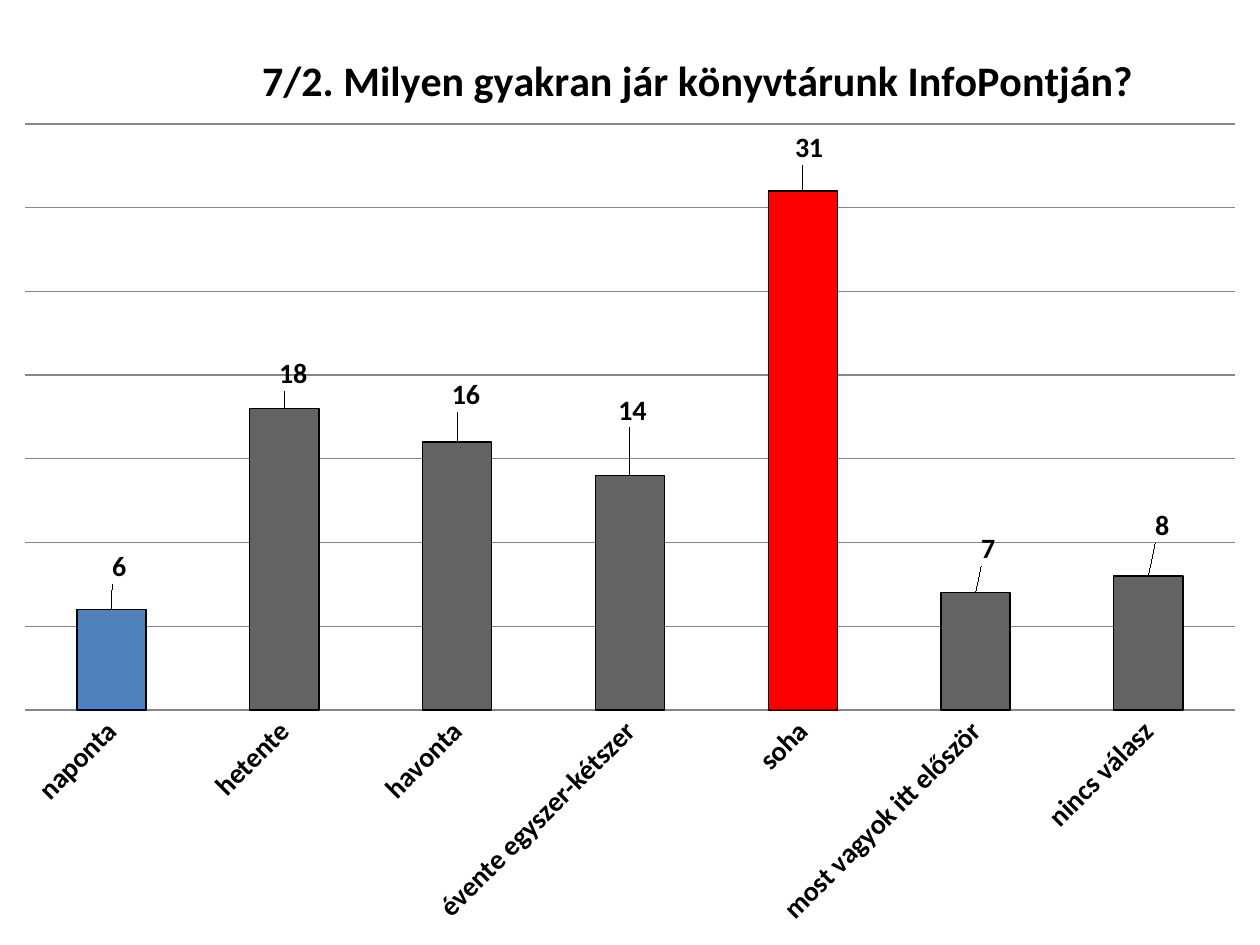
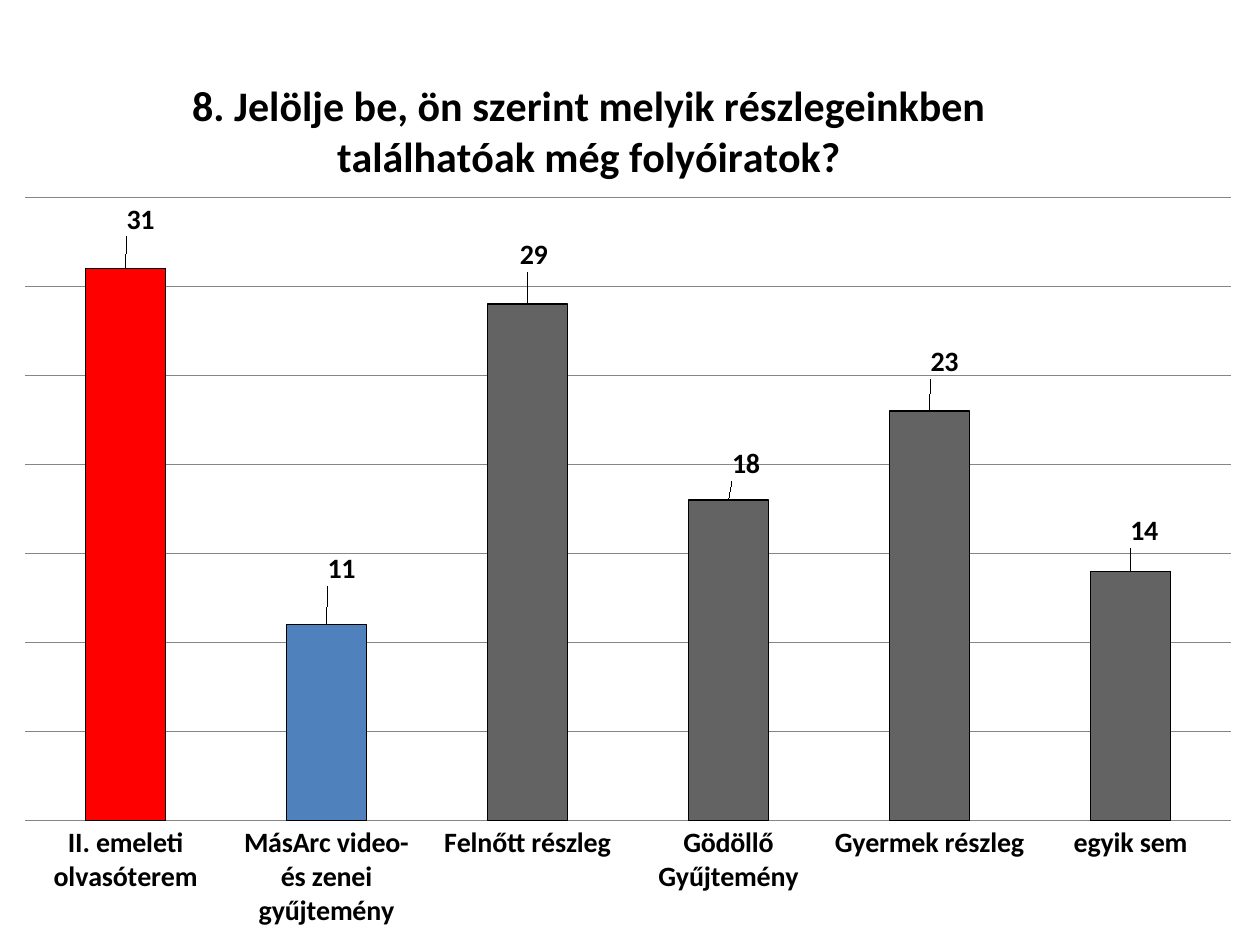
import dataclasses
import typing

import pptx
import pptx.chart.data
import pptx.dml.color
import pptx.enum.chart
import pptx.oxml
import pptx.oxml.ns
import pptx.util

INK = {"text": "000000", "grid": "868686", "bar": "636363",
       "blue": "4F81BD", "red": "FF0000"}
FACE = "Calibri"
WIDE, HIGH = pptx.util.Inches(10), pptx.util.Inches(7.5)
COL, ROW = WIDE / 1000, HIGH / 750


class Bar(typing.NamedTuple):
    name: str
    count: int
    shift: float
    lift: float
    ink: str = "bar"


@dataclasses.dataclass
class Poll:
    title: str
    top: int
    cols: int
    head: tuple[float, float]
    plot: tuple[float, float, float, float]
    turn: int
    bars: list[Bar]


POLLS = [
    Poll("7/2. Milyen gyakran jár könyvtárunk InfoPontján?",
         13, 1000, (20.2, 3), (2, 11.6, 96, 63.1), -45, [
             Bar("naponta", 6, 0.6, 2.2, "blue"),
             Bar("hetente", 18, 0.7, 1.3),
             Bar("havonta", 16, 0.7, 2.7),
             Bar("évente egyszer-kétszer", 14, 0.2, 4.6),
             Bar("soha", 31, 0.5, 2.2, "red"),
             Bar("most vagyok itt először", 7, 1, 2.3),
             Bar("nincs válasz", 8, 1.1, 3)]),
    Poll("8. Jelölje be, ön szerint melyik részlegeinkben "
         "találhatóak még folyóiratok?",
         21, 997, (14.7, 4.7), (2, 18.6, 96, 67.9), 0, [
             Bar("II. emeleti olvasóterem", 31, 1.2, 2.9, "red"),
             Bar("MásArc video- és zenei gyűjtemény", 11, 1.2, 3.6, "blue"),
             Bar("Felnőtt részleg", 29, 0.5, 2.9),
             Bar("Gödöllő Gyűjtemény", 18, 1.4, 1.5),
             Bar("Gyermek részleg", 23, 1.2, 2.9),
             Bar("egyik sem", 14, 1.1, 2)]),
]


def tint(name: str) -> pptx.dml.color.RGBColor:
    return pptx.dml.color.RGBColor.from_string(INK[name])


def style(font: typing.Any, size: int, bold: bool = True) -> None:
    font.name, font.size, font.bold = FACE, pptx.util.Pt(size), bold
    font.color.rgb = tint("text")


def stroke(line: typing.Any, name: str) -> None:
    line.color.rgb = tint(name)
    line.width = pptx.util.Pt(0.75)


def place(node: typing.Any, slot: int, spot: tuple[float, ...],
          edge: bool = True) -> None:
    for old in node.xpath("c:layout"):
        node.remove(old)
    tags = '<c:layoutTarget val="inner"/>' if len(spot) == 4 else ""
    if edge:
        tags += '<c:xMode val="edge"/><c:yMode val="edge"/>'
    for key, share in zip("xywh", spot):
        tags += f'<c:{key} val="{share / 100:.4f}"/>'
    names = pptx.oxml.ns.nsdecls("c")
    node.insert(slot, pptx.oxml.parse_xml(
        f"<c:layout {names}><c:manualLayout>{tags}</c:manualLayout></c:layout>"))


def set_axes(chart: typing.Any, turn: int) -> None:
    axis = chart.value_axis
    axis.minimum_scale, axis.maximum_scale, axis.major_unit = 0, 35, 5
    axis.visible = False
    axis.has_major_gridlines = True
    stroke(axis.major_gridlines.format.line, "grid")
    base = chart.category_axis
    base.major_tick_mark = pptx.enum.chart.XL_TICK_MARK.NONE
    stroke(base.format.line, "grid")
    style(base.tick_labels.font, 16)
    body = chart.element.xpath(".//c:catAx/c:txPr/a:bodyPr")[0]
    body.set("rot", str(turn * 60000))
    body.set("vert", "horz")


def set_bars(chart: typing.Any, bars: list[Bar]) -> None:
    plot = chart.plots[0]
    plot.gap_width = 150
    plot.vary_by_categories = False
    row = plot.series[0]
    row.format.fill.solid()
    row.format.fill.fore_color.rgb = tint("bar")
    stroke(row.format.line, "text")
    above = pptx.enum.chart.XL_LABEL_POSITION.OUTSIDE_END
    row.data_labels.show_value = True
    row.data_labels.position = above
    style(row.data_labels.font, 16)
    for index, bar in enumerate(bars):
        point = row.points[index]
        point.format.fill.solid()
        point.format.fill.fore_color.rgb = tint(bar.ink)
        stroke(point.format.line, "text")
        style(point.data_label.font, 16)
        point.data_label.position = above
    for node, bar in zip(chart.element.xpath(".//c:dLbl"), bars):
        place(node, 1, (bar.shift, -bar.lift), edge=False)


def draw(deck: typing.Any, poll: Poll) -> None:
    slide = deck.slides.add_slide(deck.slide_layouts[6])
    data = pptx.chart.data.CategoryChartData()
    data.categories = [bar.name for bar in poll.bars]
    data.add_series("Series 1", [bar.count for bar in poll.bars])
    top = round(poll.top * ROW)
    chart = slide.shapes.add_chart(
        pptx.enum.chart.XL_CHART_TYPE.COLUMN_CLUSTERED,
        0, top, round(poll.cols * COL), HIGH - top, data).chart
    style(chart.font, 10, False)
    chart.has_legend = False
    chart.has_title = True
    para = chart.chart_title.text_frame.paragraphs[0]
    para.add_run().text = poll.title
    style(para.font, 24)
    set_axes(chart, poll.turn)
    set_bars(chart, poll.bars)
    place(chart.element.xpath("c:chart/c:title")[0], 1, poll.head)
    place(chart.element.xpath("c:chart/c:plotArea")[0], 0, poll.plot)


def main() -> None:
    deck = pptx.Presentation()
    deck.slide_width, deck.slide_height = WIDE, HIGH
    for poll in POLLS:
        draw(deck, poll)
    deck.save("out.pptx")


if __name__ == "__main__":
    main()
